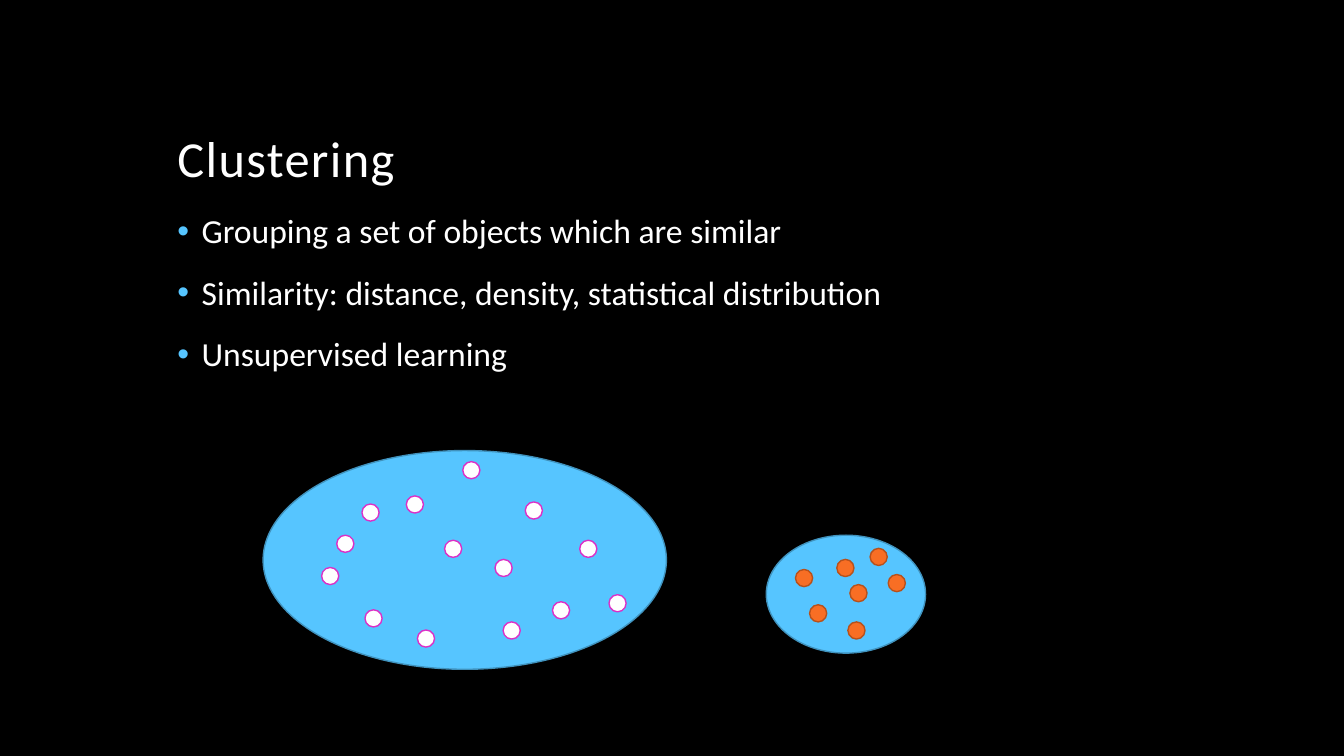
from lxml.etree import SubElement
from pptx import Presentation
from pptx.dml.color import RGBColor
from pptx.enum.shapes import MSO_SHAPE
from pptx.enum.text import MSO_ANCHOR, MSO_AUTO_SIZE, PP_ALIGN
from pptx.oxml.ns import qn
from pptx.util import Pt

PX = 9144  # 100 px to the inch
SIZE = (1333, 750)
FONT, WHITE, BLUE = "Calibri", "FFFFFF", "56C5FF"
DOT = 17
INDENT = 24

TITLE = "Clustering"
TITLE_BOX = (166, 42, 1000, 150)
POINTS = [
    "Grouping a set of objects which are similar",
    "Similarity: distance, density, statistical distribution",
    "Unsupervised learning",
]
BODY_BOX = (166, 208, 999, 450)

CLUSTERS = [
    {
        "box": (261, 447, 400, 217), "fill": WHITE, "line": "DB30C7",
        "dots": [(334, 531), (403, 492), (362, 605), (319, 563), (491, 555),
                 (459, 458), (441, 536), (548, 597), (414, 625), (499, 617),
                 (359, 500), (604, 590), (575, 536), (521, 498)],
    },
    {
        "box": (760, 531, 158, 117), "fill": "F86E24", "line": "B7511B",
        "dots": [(843, 580), (803, 600), (830, 555), (789, 565),
                 (841, 617), (881, 570), (863, 544)],
    },
]


def color(code):
    return RGBColor.from_string(code)


def place(shape, box):
    shape.left, shape.top, shape.width, shape.height = [n * PX for n in box]


def oval(slide, box, fill, line):
    shape = slide.shapes.add_shape(MSO_SHAPE.OVAL, *[n * PX for n in box])
    shape.shadow.inherit = False
    shape.fill.solid()
    shape.fill.fore_color.rgb = color(fill)
    shape.line.color.rgb = color(line)
    shape.line.width = Pt(1)


def setup(shape, box, anchor):
    place(shape, box)
    frame = shape.text_frame
    frame.word_wrap = True
    frame.auto_size = MSO_AUTO_SIZE.NONE
    frame.vertical_anchor = anchor
    return frame


def write(para, text, size):
    para.alignment = PP_ALIGN.LEFT
    para.line_spacing = 0.9
    run = para.add_run()
    run.text = text
    run.font.name = FONT
    run.font.size = Pt(size)
    run.font.color.rgb = color(WHITE)
    return run


def bullet(para):
    props = para._p.get_or_add_pPr()
    props.set("marL", str(INDENT * PX))
    props.set("indent", str(-INDENT * PX))
    tint = SubElement(props, qn("a:buClr"))
    SubElement(tint, qn("a:srgbClr")).set("val", BLUE)
    SubElement(props, qn("a:buFont")).set("typeface", "Arial")
    SubElement(props, qn("a:buChar")).set("char", "•")


def main():
    deck = Presentation()
    deck.slide_width, deck.slide_height = [n * PX for n in SIZE]
    slide = deck.slides.add_slide(deck.slide_layouts[1])
    slide.background.fill.solid()
    slide.background.fill.fore_color.rgb = color("000000")

    frame = setup(slide.shapes.title, TITLE_BOX, MSO_ANCHOR.BOTTOM)
    run = write(frame.paragraphs[0], TITLE, 36)
    run.font._element.set("spc", "100")

    frame = setup(slide.placeholders[1], BODY_BOX, MSO_ANCHOR.TOP)
    for i, text in enumerate(POINTS):
        para = frame.add_paragraph() if i else frame.paragraphs[0]
        bullet(para)
        para.space_before = Pt(18 if i else 0)
        write(para, text, 24)

    for group in CLUSTERS:
        oval(slide, group["box"], BLUE, "4092BD")
        for x, y in group["dots"]:
            oval(slide, (x, y, DOT, DOT), group["fill"], group["line"])

    deck.save("out.pptx")


if __name__ == "__main__":
    main()
